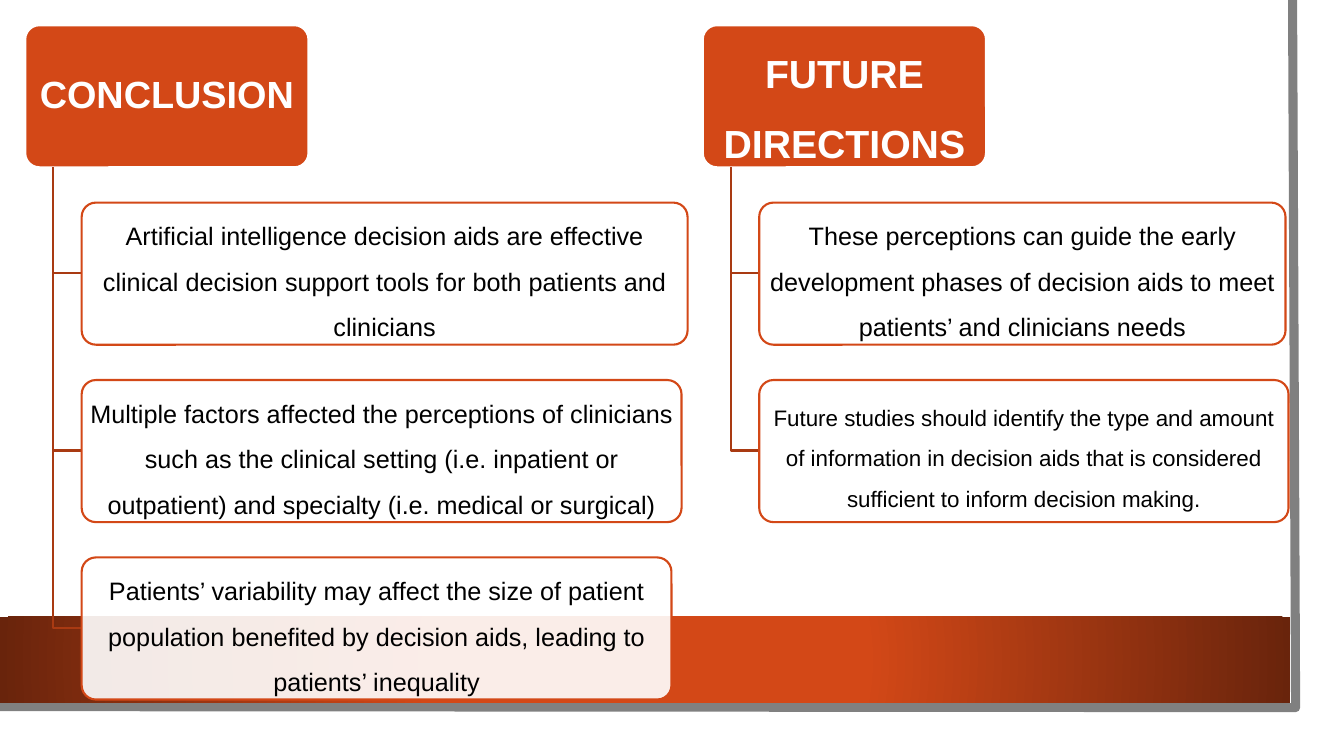
from dataclasses import dataclass

from lxml import etree
from pptx import Presentation
from pptx.dml.color import RGBColor
from pptx.enum.shapes import MSO_SHAPE
from pptx.enum.text import MSO_ANCHOR, PP_ALIGN
from pptx.oxml.ns import qn
from pptx.util import Pt

RECT, ROUNDED = MSO_SHAPE.RECTANGLE, MSO_SHAPE.ROUNDED_RECTANGLE
MIDDLE, CENTER = MSO_ANCHOR.MIDDLE, PP_ALIGN.CENTER
PX = 9144  # 100 px to the inch


@dataclass(frozen=True)
class Theme:
    accent: RGBColor = RGBColor.from_string("D34817")
    dark: RGBColor = RGBColor.from_string("69240C")
    branch: RGBColor = RGBColor.from_string("A93A12")
    frame: RGBColor = RGBColor.from_string("808080")
    white: RGBColor = RGBColor.from_string("FFFFFF")
    black: RGBColor = RGBColor.from_string("000000")
    font: str = "Arial"
    outline: float = 1.5
    frame_line: float = 6.5


THEME = Theme()

# Each column: left, heading (text, size, line spacing), cards (width, size, insets, text)
COLUMNS = [
    (25, ("CONCLUSION", 27, 0.9), [
        (601, 18, (4, 3), "Artificial intelligence decision aids are effective clinical "
                          "decision support tools for both patients and clinicians"),
        (595, 18, (4, 3), "Multiple factors affected the perceptions of clinicians such as "
                          "the clinical setting (i.e. inpatient or outpatient) and specialty "
                          "(i.e. medical or surgical)"),
        (585, 18, (4, 3), "Patients’ variability may affect the size of patient population "
                          "benefited by decision aids, leading to patients’ inequality"),
    ]),
    (697, ("FUTURE DIRECTIONS", 28, 1.5), [
        (522, 18, (4, 3), "These perceptions can guide the early development phases of "
                          "decision aids to meet patients’ and clinicians needs"),
        (525, 16, (3, 2), "Future studies should identify the type and amount of information "
                          "in decision aids that is considered sufficient to inform decision "
                          "making."),
    ]),
]
BOX_HEIGHT = 141
HEADING_TOP, HEADING_WIDTH = 25, 281
CARD_TOP, CARD_STEP, CARD_INDENT = 201, 176, 56

prs = Presentation()
prs.slide_width, prs.slide_height = 1333 * PX, 750 * PX
slide = prs.slides.add_slide(prs.slide_layouts[6])


def add_box(left, top, width, text, *, size, color, fill, line, insets,
            spacing=1.5, bold=False):
    box = slide.shapes.add_shape(ROUNDED, left * PX, top * PX, width * PX, BOX_HEIGHT * PX)
    box.adjustments[0] = 0.1
    box.shadow.inherit = False
    box.fill.solid()
    box.fill.fore_color.rgb = fill
    box.line.color.rgb = line
    box.line.width = Pt(THEME.outline)
    frame = box.text_frame
    frame.word_wrap = True
    frame.vertical_anchor = MIDDLE
    frame.margin_left = frame.margin_right = insets[0] * PX
    frame.margin_top = frame.margin_bottom = insets[1] * PX
    paragraph = frame.paragraphs[0]
    paragraph.alignment = CENTER
    paragraph.line_spacing = spacing
    paragraph.space_after = Pt(0.35 * size)
    run = paragraph.add_run()
    run.text = text
    run.font.name, run.font.size, run.font.bold = THEME.font, Pt(size), bold
    run.font.color.rgb = color
    return box


def add_path(points, color, width):
    builder = slide.shapes.build_freeform(*points[0], scale=PX)
    builder.add_line_segments(points[1:], close=False)
    outline = builder.convert_to_shape()
    outline.shadow.inherit = False
    outline.fill.background()
    outline.line.color.rgb = color
    outline.line.width = Pt(width)


# Page frame along the right and bottom edges
add_path([(1282, 0), (1285, 702), (-3, 701)], THEME.frame, THEME.frame_line)

# Footer band, bright in the middle and dark at the ends
band = slide.shapes.add_shape(RECT, 0, 612 * PX, 1280 * PX, 85 * PX)
band.shadow.inherit = False
band.line.fill.background()
band.fill.gradient()
for stop, position, color in zip(band.fill.gradient_stops, (0.34, 1), (THEME.accent, THEME.dark)):
    stop.position = position
    stop.color.rgb = color
gradient = band._element.spPr.find(qn("a:gradFill"))
gradient.remove(gradient.find(qn("a:lin")))
circle = etree.SubElement(gradient, qn("a:path"), path="circle")
etree.SubElement(circle, qn("a:fillToRect"), l="50000", t="50000", r="50000", b="50000")

# Columns: a heading with cards branching from its trunk
for left, (heading, heading_size, heading_spacing), cards in COLUMNS:
    add_box(left, HEADING_TOP, HEADING_WIDTH, heading, size=heading_size, color=THEME.white,
            fill=THEME.accent, line=THEME.white, insets=(6, 4), spacing=heading_spacing, bold=True)
    trunk = left + CARD_INDENT // 2
    card_left = left + CARD_INDENT
    for row, (width, size, insets, text) in enumerate(cards):
        top = CARD_TOP + row * CARD_STEP
        middle = top + BOX_HEIGHT // 2
        add_path([(trunk, HEADING_TOP + BOX_HEIGHT), (trunk, middle), (card_left, middle)],
                 THEME.branch, THEME.outline)
        card = add_box(card_left, top, width, text, size=size, color=THEME.black,
                       fill=THEME.white, line=THEME.accent, insets=insets)
        card_color = card._element.spPr.find(qn("a:solidFill")).find(qn("a:srgbClr"))
        etree.SubElement(card_color, qn("a:alpha"), val="90000")

prs.save("out.pptx")
